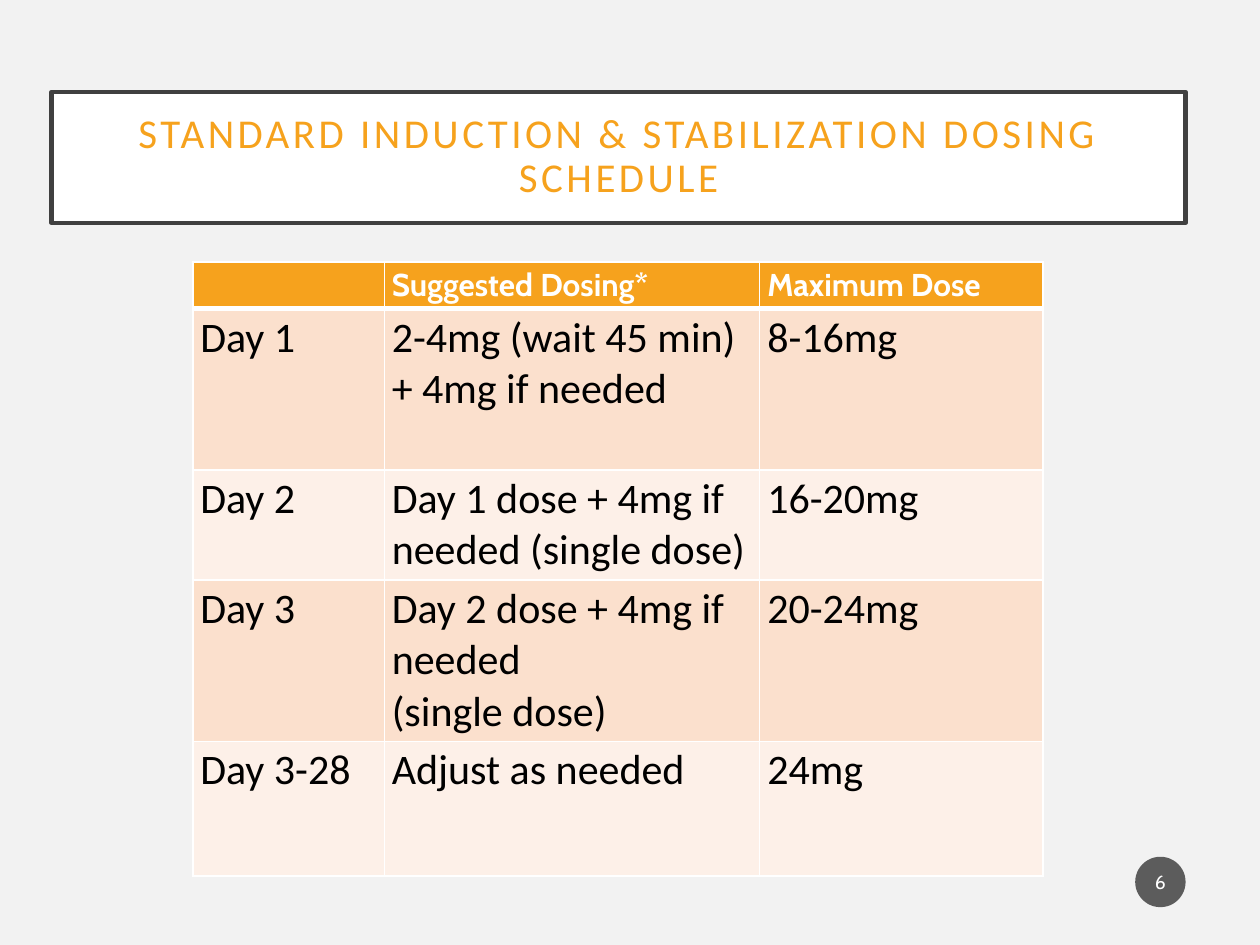
"""Build a slide with a dosing schedule table."""
from typing import NamedTuple

from lxml import etree
from pptx import Presentation
from pptx import util as u
from pptx.dml.color import RGBColor
from pptx.enum import shapes, text
from pptx.oxml.ns import qn

BACKGROUND = RGBColor(0xF2, 0xF2, 0xF2)
WHITE = RGBColor(0xFF, 0xFF, 0xFF)
BLACK = RGBColor(0x00, 0x00, 0x00)
FRAME = RGBColor(0x40, 0x40, 0x40)
ORANGE = RGBColor(0xF6, 0xA2, 0x1D)
PEACH = RGBColor(0xFB, 0xE0, 0xCD)
CREAM = RGBColor(0xFD, 0xF0, 0xE8)
BADGE = RGBColor(0x1D, 0x1D, 0x1D)


class Style(NamedTuple):
    font: str
    size: float
    color: RGBColor
    bold: bool = False


class Box(NamedTuple):
    kind: shapes.MSO_SHAPE
    left: float
    top: float
    width: float
    height: float
    fill: RGBColor
    words: str
    style: Style
    inset: tuple[float, float]


class Row(NamedTuple):
    height: float
    cells: tuple[str, str, str]


HEADING = Style("Cabin", 18, WHITE, True)
BODY = Style("Calibri", 24, BLACK)
TITLE = Box(shapes.MSO_SHAPE.RECTANGLE, 0.41, 0.73, 9, 1.04, WHITE,
            "STANDARD INDUCTION & STABILIZATION DOSING SCHEDULE",
            Style("Calibri", 23.4, ORANGE), (0.2, 0.2))
NUMBER = Box(shapes.MSO_SHAPE.OVAL, 9.01, 6.8, 0.4, 0.4, BADGE, "6",
             Style("Cabin", 11, WHITE), (0.02, 0.05))
COLUMNS = (1.52, 2.98, 2.25)
ROWS = (
    Row(0.37, ("", "Suggested Dosing*", "Maximum Dose")),
    Row(1.28, ("Day 1", "2-4mg (wait 45 min)\n+ 4mg if needed", "8-16mg")),
    Row(0.87, ("Day 2", "Day 1 dose + 4mg if needed (single dose)", "16-20mg")),
    Row(1.28, ("Day 3", "Day 2 dose + 4mg if needed\n(single dose)", "20-24mg")),
    Row(1.07, ("Day 3-28", "Adjust as needed", "24mg")),
)


def write(frame, words: str, style: Style) -> None:
    frame.text = words
    for para in frame.paragraphs:
        for span in para.runs:
            span.font.name = style.font
            span.font.size = u.Pt(style.size)
            span.font.bold = style.bold
            span.font.color.rgb = style.color


def set_insets(item, side: float, end: float) -> None:
    item.margin_left = item.margin_right = u.Inches(side)
    item.margin_top = item.margin_bottom = u.Inches(end)


def add_box(slide, box: Box):
    shape = slide.shapes.add_shape(box.kind, u.Inches(box.left), u.Inches(box.top),
                                   u.Inches(box.width), u.Inches(box.height))
    shape.shadow.inherit = False
    shape.fill.solid()
    shape.fill.fore_color.rgb = box.fill
    shape.line.fill.background()
    frame = shape.text_frame
    frame.word_wrap = True
    frame.vertical_anchor = text.MSO_ANCHOR.MIDDLE
    set_insets(frame, *box.inset)
    write(frame, box.words, box.style)
    frame.paragraphs[0].alignment = text.PP_ALIGN.CENTER
    return shape


def add_title(slide) -> None:
    shape = add_box(slide, TITLE)
    shape.line.color.rgb = FRAME
    shape.line.width = u.Pt(2.5)
    para = shape.text_frame.paragraphs[0]
    para.line_spacing = 0.9
    para.runs[0].font._element.set("spc", "200")


def add_number(slide) -> None:
    shape = add_box(slide, NUMBER)
    color = shape.fill._xPr.find(qn("a:solidFill"))[0]
    etree.SubElement(color, qn("a:alpha"), val="70000")


def set_borders(cell, widths: dict[str, float]) -> None:
    properties = cell._tc.get_or_add_tcPr()
    for index, (side, width) in enumerate(widths.items()):
        line = etree.Element(qn(f"a:ln{side}"), w=str(u.Pt(width)))
        fill = etree.SubElement(line, qn("a:solidFill"))
        etree.SubElement(fill, qn("a:srgbClr"), val=str(WHITE))
        properties.insert(index, line)


def add_schedule(slide) -> None:
    height = sum(row.height for row in ROWS)
    table = slide.shapes.add_table(len(ROWS), len(COLUMNS), u.Inches(1.53), u.Inches(2.08),
                                   u.Inches(sum(COLUMNS)), u.Inches(height)).table
    for column, width in zip(table.columns, COLUMNS):
        column.width = u.Inches(width)
    for index, row in enumerate(ROWS):
        table.rows[index].height = u.Inches(row.height)
        band = PEACH if index % 2 else CREAM
        for position, words in enumerate(row.cells):
            cell = table.cell(index, position)
            cell.fill.solid()
            cell.fill.fore_color.rgb = band if index else ORANGE
            set_insets(cell, 0.06, 0.03)
            write(cell.text_frame, words, BODY if index else HEADING)
            set_borders(cell, {"L": 1, "R": 1, "T": 3 if index == 1 else 1,
                               "B": 1 if index else 3})


def main() -> None:
    deck = Presentation()
    deck.slide_width, deck.slide_height = u.Inches(10), u.Inches(7.5)
    slide = deck.slides.add_slide(deck.slide_layouts[6])
    slide.background.fill.solid()
    slide.background.fill.fore_color.rgb = BACKGROUND
    add_title(slide)
    add_schedule(slide)
    add_number(slide)
    deck.save("out.pptx")


if __name__ == "__main__":
    main()
